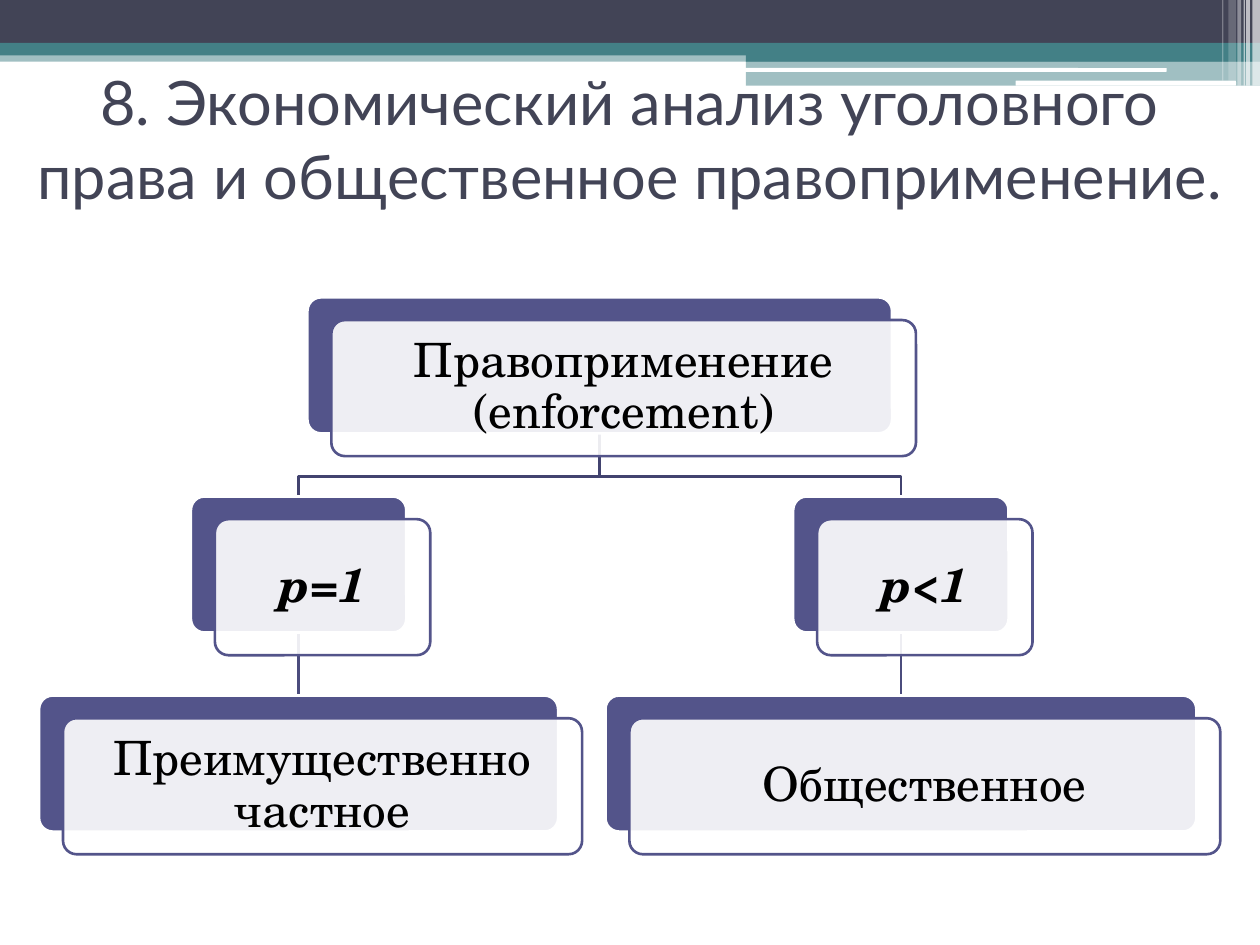
from dataclasses import dataclass

from lxml.etree import SubElement
from pptx import Presentation
from pptx.dml.color import RGBColor
from pptx.enum.shapes import MSO_CONNECTOR, MSO_SHAPE
from pptx.enum.text import MSO_ANCHOR, MSO_AUTO_SIZE, PP_ALIGN
from pptx.oxml.ns import qn
from pptx.util import Inches, Pt

WHITE = RGBColor(0xFF, 0xFF, 0xFF)
BLACK = RGBColor(0x00, 0x00, 0x00)
SLATE = RGBColor(0x42, 0x44, 0x56)
TEAL = RGBColor(0x43, 0x80, 0x86)
VIOLET = RGBColor(0x53, 0x54, 0x8A)
UPPER_LINK = RGBColor(0x42, 0x43, 0x6F)
LOWER_LINK = RGBColor(0x4B, 0x4C, 0x7D)

WIDTH, HEIGHT = 10, 7.5
ROW_TOP, ROW_STEP = 2.36, 1.58
CARD_HEIGHT = 1.08
CARD_SHIFT_X, CARD_SHIFT_Y = 0.19, 0.18
LINE_WIDTH = Pt(1.5)


@dataclass(frozen=True)
class Band:
    left: float
    top: float
    width: float
    height: float
    color: RGBColor
    opacity: int = 100
    rounded: bool = False


@dataclass(frozen=True)
class Node:
    text: str
    row: int
    center: float
    width: float
    emphasized: bool = False

    @property
    def top(self) -> float:
        return ROW_TOP + self.row * ROW_STEP

    @property
    def bottom(self) -> float:
        return self.top + CARD_HEIGHT


BANDS = [
    Band(0, 0.4, WIDTH, 0.09, TEAL, 50),
    Band(0, 0, WIDTH, 0.34, SLATE),
    Band(0, 0.34, WIDTH, 0.1, TEAL),
    Band(5.92, 0.39, 4.08, 0.1, TEAL),
    Band(5.92, 0.48, 4.08, 0.2, TEAL, 50),
    Band(5.91, 0.54, 3.35, 0.03, WHITE, rounded=True),
    Band(8.06, 0.64, 1.75, 0.04, WHITE, rounded=True),
    Band(9.94, 0, 0.06, 0.68, WHITE, 65),
    Band(9.89, 0, 0.03, 0.68, WHITE, 65),
    Band(9.87, 0, 0.01, 0.68, WHITE, 60),
    Band(9.82, 0, 0.03, 0.68, WHITE, 40),
    Band(9.75, 0, 0.06, 0.64, WHITE, 20),
    Band(9.7, 0, 0.01, 0.64, WHITE, 30),
]

ROOT = Node("Правоприменение (enforcement)", 0, 4.76, 4.64)
CERTAIN = Node("p=1", 1, 2.37, 1.71, True)
PRIVATE = Node("Преимущественно частное", 2, 2.37, 4.12)
UNCERTAIN = Node("p<1", 1, 7.15, 1.71, True)
PUBLIC = Node("Общественное", 2, 7.15, 4.69)
NODES = [ROOT, CERTAIN, PRIVATE, UNCERTAIN, PUBLIC]
LINKS = [(UNCERTAIN, PUBLIC), (ROOT, UNCERTAIN), (CERTAIN, PRIVATE), (ROOT, CERTAIN)]


def add_block(slide, kind, left: float, top: float, width: float, height: float,
              color: RGBColor, opacity: int = 100):
    shape = slide.shapes.add_shape(
        kind, Inches(left), Inches(top), Inches(width), Inches(height))
    shape.shadow.inherit = False
    shape.fill.solid()
    shape.fill.fore_color.rgb = color
    if opacity < 100:
        color_element = shape.fill._xPr.find(qn("a:solidFill"))[0]
        SubElement(color_element, qn("a:alpha"), val=str(opacity * 1000))
    shape.line.fill.background()
    return shape


def add_band(slide, band: Band) -> None:
    kind = MSO_SHAPE.ROUNDED_RECTANGLE if band.rounded else MSO_SHAPE.RECTANGLE
    add_block(slide, kind, band.left, band.top, band.width, band.height,
              band.color, band.opacity)


def format_title(slide, text: str) -> None:
    title = slide.shapes.title
    title.left, title.top = 0, Inches(0.47)
    title.width, title.height = Inches(WIDTH), Inches(1.25)
    frame = title.text_frame
    frame.text = text
    frame.auto_size = MSO_AUTO_SIZE.NONE
    frame.vertical_anchor = MSO_ANCHOR.MIDDLE
    paragraph = frame.paragraphs[0]
    paragraph.alignment = PP_ALIGN.CENTER
    paragraph.font.name = "Lato"
    paragraph.font.size = Pt(35)
    paragraph.font.color.rgb = SLATE
    # Bring the title in front of the bands
    slide.shapes._spTree.append(title._element)


def add_link(slide, parent: Node, child: Node) -> None:
    if parent.center == child.center:
        link = slide.shapes.add_connector(
            MSO_CONNECTOR.STRAIGHT, Inches(parent.center), Inches(parent.bottom),
            Inches(child.center), Inches(child.top))
        SubElement(link._element.spPr, qn("a:effectLst"))
        link.line.color.rgb = LOWER_LINK
    else:
        bend = child.top - 0.16
        points = [(parent.center, bend), (child.center, bend), (child.center, child.top)]
        builder = slide.shapes.build_freeform(Inches(parent.center), Inches(parent.bottom))
        builder.add_line_segments([(Inches(x), Inches(y)) for x, y in points], close=False)
        link = builder.convert_to_shape()
        link.shadow.inherit = False
        link.fill.background()
        link.line.color.rgb = UPPER_LINK
    link.line.width = LINE_WIDTH


def add_card(slide, node: Node, shift_x: float, shift_y: float,
             fill: RGBColor, outline: RGBColor, opacity: int = 100):
    card = add_block(slide, MSO_SHAPE.ROUNDED_RECTANGLE,
                     node.center - node.width / 2 + shift_x, node.top + shift_y,
                     node.width, CARD_HEIGHT, fill, opacity)
    card.adjustments[0] = 0.1
    card.line.color.rgb = outline
    card.line.width = LINE_WIDTH
    return card


def add_node(slide, node: Node) -> None:
    add_card(slide, node, 0, 0, VIOLET, WHITE)
    card = add_card(slide, node, CARD_SHIFT_X, CARD_SHIFT_Y, WHITE, VIOLET, 90)
    frame = card.text_frame
    frame.text = node.text
    frame.word_wrap = True
    frame.vertical_anchor = MSO_ANCHOR.MIDDLE
    frame.margin_left = frame.margin_right = Inches(0.08)
    frame.margin_top = frame.margin_bottom = Inches(0.08)
    paragraph = frame.paragraphs[0]
    paragraph.alignment = PP_ALIGN.CENTER
    paragraph.line_spacing = 0.9
    font = paragraph.font
    font.name = "TeX Gyre Schola"
    font.size = Pt(27)
    font.color.rgb = BLACK
    font.bold = font.italic = node.emphasized


def main() -> None:
    presentation = Presentation()
    presentation.slide_width = Inches(WIDTH)
    presentation.slide_height = Inches(HEIGHT)
    slide = presentation.slides.add_slide(presentation.slide_layouts.get_by_name("Title Only"))

    # Header bands and title
    for band in BANDS:
        add_band(slide, band)
    format_title(slide, "8. Экономический анализ уголовного права "
                        "и общественное правоприменение.")

    # Hierarchy: links behind the cards
    for parent, child in LINKS:
        add_link(slide, parent, child)
    for node in NODES:
        add_node(slide, node)

    presentation.save("out.pptx")


if __name__ == "__main__":
    main()
